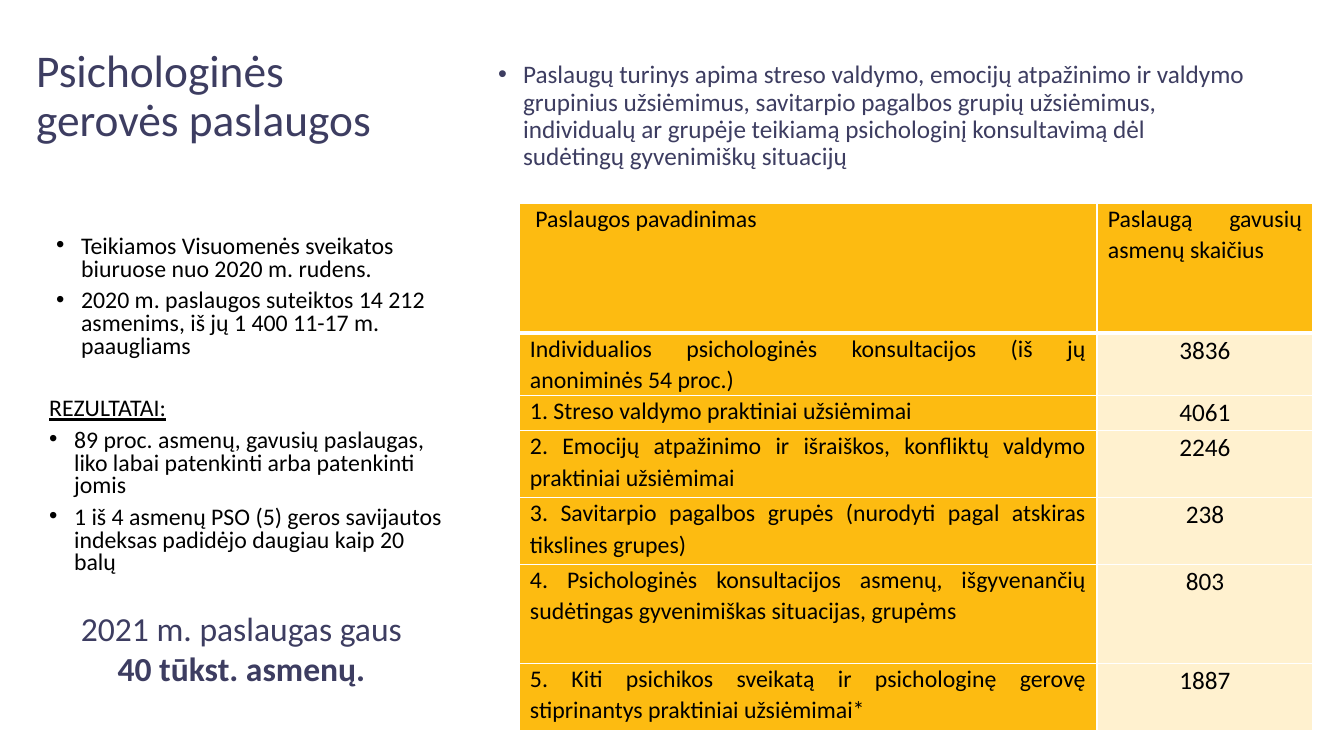
from lxml import etree
from pptx import Presentation
from pptx.dml.color import RGBColor
from pptx.enum.text import MSO_ANCHOR, MSO_AUTO_SIZE, PP_ALIGN
from pptx.oxml.ns import qn
from pptx.util import Pt

PX = 914400 / 100.8
LEFT, CENTER, JUSTIFY = PP_ALIGN.LEFT, PP_ALIGN.CENTER, PP_ALIGN.JUSTIFY
TOP, MIDDLE = MSO_ANCHOR.TOP, MSO_ANCHOR.MIDDLE
FIXED_SIZE = MSO_AUTO_SIZE.NONE
INDIGO = RGBColor(0x3D, 0x3D, 0x61)
BLACK = RGBColor(0x00, 0x00, 0x00)
AMBER = RGBColor(0xFD, 0xBB, 0x11)
CREAM = RGBColor(0xFF, 0xF1, 0xCF)
WHITE = RGBColor(0xFF, 0xFF, 0xFF)


def px(length):
    return round(length * PX)


def write(frame, text, size=17, color=BLACK, align=LEFT, line=0.8, before=0,
          after=6, indent=0, bullet=False, level=0, bold=False, underline=False):
    paragraph = frame.paragraphs[0]
    if paragraph.runs:
        paragraph = frame.add_paragraph()
    paragraph.level = level
    properties = paragraph._p.get_or_add_pPr()
    properties.set("marL", str(px(indent)))
    properties.set("indent", str(px(-25 if bullet else 0)))
    if bullet:
        etree.SubElement(properties, qn("a:buChar"), char="•")
    else:
        etree.SubElement(properties, qn("a:buNone"))
    paragraph.alignment = align
    paragraph.line_spacing = line
    paragraph.space_before = Pt(before)
    paragraph.space_after = Pt(after)
    run = paragraph.add_run()
    run.text = text
    run.font.name = "Calibri"
    run.font.size = Pt(size)
    run.font.color.rgb = color
    run.font.bold = bold
    run.font.underline = underline


presentation = Presentation()
presentation.slide_width = px(1344)
presentation.slide_height = px(756)
slide = presentation.slides.add_slide(presentation.slide_layouts[3])

heading, results, description = slide.placeholders
for part, box, anchor in [
    (heading, (26, 48, 398, 98), MIDDLE),
    (results, (21, 231, 441, 485), TOP),
    (description, (463, 57, 794, 120), TOP),
]:
    part.left, part.top, part.width, part.height = map(px, box)
    part.text_frame.word_wrap = True
    part.text_frame.auto_size = FIXED_SIZE
    part.text_frame.vertical_anchor = anchor

write(heading.text_frame, "Psichologinės gerovės paslaugos",
      size=32.4, color=INDIGO, line=0.9, after=0)

write(description.text_frame,
      "Paslaugų turinys apima streso valdymo, emocijų atpažinimo ir valdymo "
      "grupinius užsiėmimus, savitarpio pagalbos grupių užsiėmimus, individualų "
      "ar grupėje teikiamą psichologinį konsultavimą dėl sudėtingų gyvenimiškų situacijų",
      size=18, color=INDIGO, line=0.9, indent=50, bullet=True, level=1)

for text, style in [
    ("Teikiamos Visuomenės sveikatos biuruose nuo 2020 m. rudens.",
     dict(indent=50, bullet=True, level=1)),
    ("2020 m. paslaugos suteiktos 14 212 asmenims, iš jų 1 400 11-17 m. paaugliams",
     dict(indent=50, bullet=True, level=1)),
    ("REZULTATAI:", dict(indent=18, before=22.5, underline=True)),
    ("89 proc. asmenų, gavusių paslaugas, liko labai patenkinti arba patenkinti jomis",
     dict(indent=43, bullet=True)),
    ("1 iš 4 asmenų PSO (5) geros savijautos indeksas padidėjo daugiau kaip 20 balų",
     dict(indent=43, bullet=True)),
    ("2021 m. paslaugas gaus", dict(size=24, color=INDIGO, align=CENTER, before=22.5)),
    ("40 tūkst. asmenų.", dict(size=24, color=INDIGO, align=CENTER, bold=True)),
]:
    write(results.text_frame, text, **style)

services = [
    (130, " Paslaugos pavadinimas", "Paslaugą gavusių asmenų skaičius"),
    (61, "Individualios psichologinės konsultacijos (iš jų anoniminės 54 proc.)", "3836"),
    (35, "1. Streso valdymo praktiniai užsiėmimai", "4061"),
    (67, "2. Emocijų atpažinimo ir išraiškos, konfliktų valdymo praktiniai užsiėmimai", "2246"),
    (67, "3. Savitarpio pagalbos grupės (nurodyti pagal atskiras tikslines grupes)", "238"),
    (99, "4. Psichologinės konsultacijos asmenų, išgyvenančių sudėtingas "
         "gyvenimiškas situacijas, grupėms", "803"),
    (67, "5. Kiti psichikos sveikatą ir psichologinę gerovę stiprinantys "
         "praktiniai užsiėmimai*", "1887"),
]
table = slide.shapes.add_table(len(services), 2, px(519), px(203), px(794), px(526)).table
table.columns[0].width = px(578)
table.columns[1].width = px(216)

for row, (height, *texts) in enumerate(services):
    table.rows[row].height = px(height)
    for column, text in enumerate(texts):
        cell = table.cell(row, column)
        cell.margin_left = cell.margin_right = px(11)
        cell.margin_top = cell.margin_bottom = 0
        cell.vertical_anchor = TOP
        is_count = row > 0 and column == 1
        for side in "LRTB":
            thick = (row, side) in [(0, "B"), (1, "T")]
            border = etree.SubElement(cell._tc.get_or_add_tcPr(), qn(f"a:ln{side}"),
                                      w=str(Pt(3 if thick else 1)))
            paint = etree.SubElement(border, qn("a:solidFill"))
            etree.SubElement(paint, qn("a:srgbClr"), val=str(WHITE))
        cell.fill.solid()
        cell.fill.fore_color.rgb = CREAM if is_count else AMBER
        write(cell.text_frame, text, size=18 if is_count else 17,
              align=CENTER if is_count else JUSTIFY, line=1.07, after=8)

presentation.save("out.pptx")
